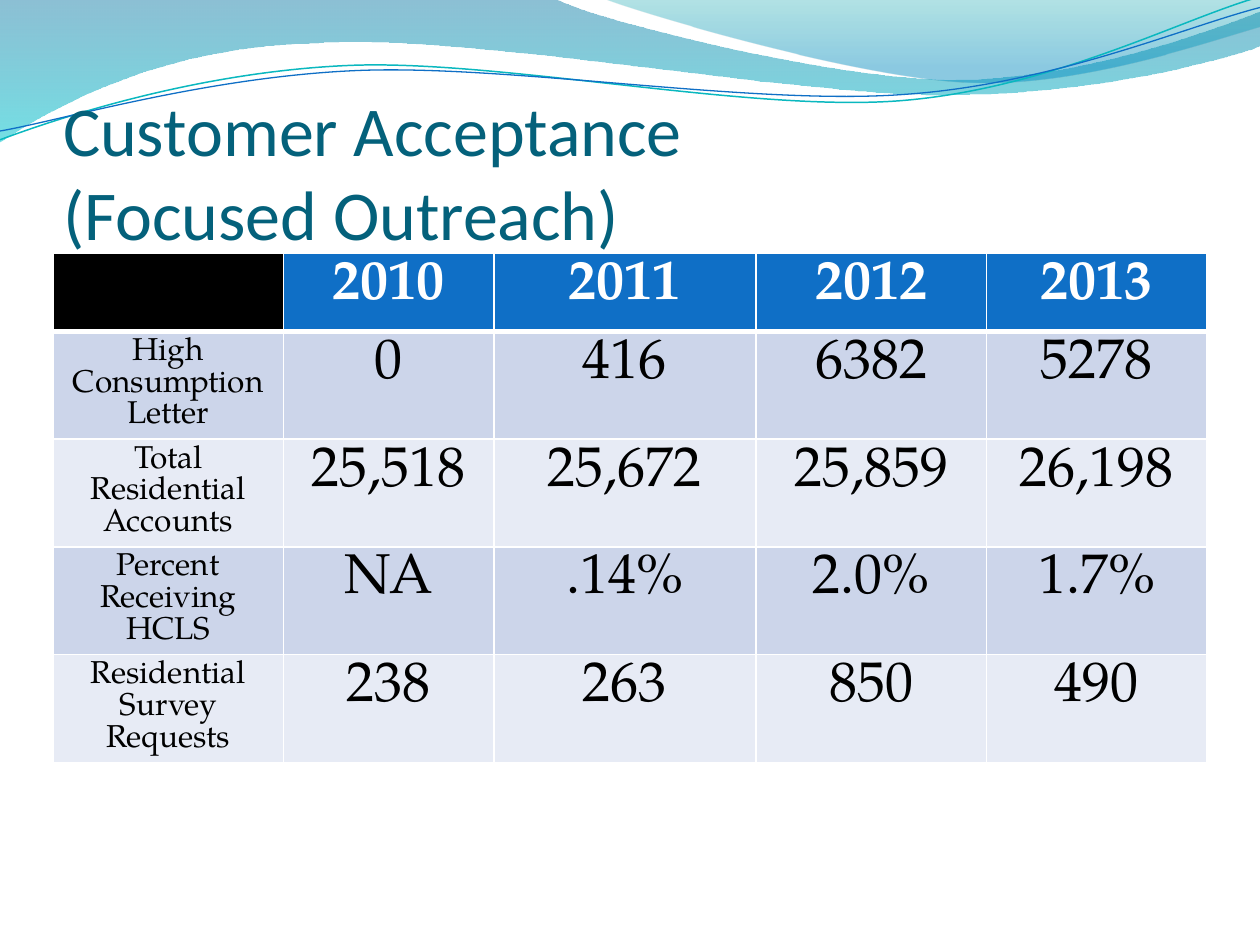
from math import cos, radians, sin

from lxml.etree import SubElement
from pptx import Presentation
from pptx.dml.color import RGBColor
from pptx.enum.text import MSO_ANCHOR, PP_ALIGN
from pptx.oxml.ns import qn
from pptx.util import Inches, Pt

TABLE_FONT = "TeX Gyre Pagella"
COLUMN_WIDTHS = [1.83, 1.67, 2.08, 1.83, 1.75]
ROW_HEIGHT = 0.62
ROWS = [
    ["", "2010", "2011", "2012", "2013"],
    ["High Consumption Letter", "0", "416", "6382", "5278"],
    ["Total Residential\nAccounts", "25,518", "25,672", "25,859", "26,198"],
    ["Percent Receiving HCLS", "NA", ".14%", "2.0%", "1.7%"],
    ["Residential Survey Requests", "238", "263", "850", "490"],
]

UNITS = 1000  # path units to the inch
TILT = -2.7  # degrees by which the wave lines are turned

# Each path is a start point and steps: 2 numbers for a line, 6 for a Bézier curve.
WIDE_WAVE = [
    (0, 0), (4.4, -0.01),
    (4.76, 0.17, 6.64, 0.63, 7.58, 0.63), (8.53, 0.63, 9.58, 0.26, 10, 0.09),
    (10.01, 0.36),
    (9.83, 0.44, 8.7, 0.76, 7.46, 0.75), (6.22, 0.75, 3.82, 0.28, 2.57, 0.34),
    (1.29, 0.36, 0.46, 0.83, -0.01, 1.13),
]
RIGHT_WAVE = [
    (4.79, -0.01),
    (5.09, 0.11, 6.82, 0.62, 7.69, 0.65), (8.56, 0.69, 9.61, 0.32, 10, 0.21),
    (10, 0),
]
TEAL_LINE = [
    (0, 1.11),
    (0.48, 0.93, 1.58, 0.57, 2.77, 0.52), (3.95, 0.47, 5.93, 0.89, 7.13, 0.8),
    (8.33, 0.71, 9.38, 0.15, 9.98, -0.02),
]
BLUE_LINE = [
    (0, 1.04),
    (0.47, 0.96, 1.64, 0.61, 2.83, 0.56), (4.03, 0.51, 5.97, 0.84, 7.17, 0.75),
    (8.36, 0.67, 9.41, 0.21, 10, 0.06),
]


def color(hex_string):
    return RGBColor.from_string(hex_string)


def pairs(numbers):
    return list(zip(numbers[::2], numbers[1::2]))


def turn(path, degrees, center):
    """Turn every point of a path clockwise about the center."""
    cosine, sine = cos(radians(degrees)), sin(radians(degrees))
    turned = []
    for segment in path:
        numbers = []
        for x, y in pairs(segment):
            dx, dy = x - center[0], y - center[1]
            numbers += [center[0] + dx * cosine - dy * sine,
                        center[1] + dx * sine + dy * cosine]
        turned.append(tuple(numbers))
    return turned


def add_path(slide, path, close):
    """Add a freeform through the path's end points, then bend its curved steps."""
    path = [[round(number * UNITS) for number in segment] for segment in path]
    anchors = [segment[-2:] for segment in path]
    left, top = (min(values) for values in zip(*anchors))
    builder = slide.shapes.build_freeform(*anchors[0], scale=Inches(1) / UNITS)
    builder.add_line_segments(anchors[1:], close=close)
    shape = builder.convert_to_shape()
    shape.shadow.inherit = False
    lines = list(shape._element.iter(qn("a:lnTo")))
    for line, segment in zip(lines, path[1:]):
        if len(segment) == 6:
            curve = SubElement(line.getparent(), qn("a:cubicBezTo"))
            for x, y in pairs(segment):
                SubElement(curve, qn("a:pt"), x=str(x - left), y=str(y - top))
            line.getparent().replace(line, curve)
    return shape


def add_wave(slide, path, stops):
    """Add a closed wave; each stop is a position, a colour and an opacity percent."""
    shape = add_path(slide, path, close=True)
    shape.line.fill.background()
    shape.fill.gradient()
    shape.fill.gradient_angle = 270
    for stop, (position, hex_string, _) in zip(shape.fill.gradient_stops, stops):
        stop.position = position
        stop.color.rgb = color(hex_string)
    elements = shape._element.spPr.iter(qn("a:srgbClr"))
    for element, (_, _, opacity) in zip(elements, stops):
        SubElement(element, qn("a:alpha")).set("val", str(opacity * 1000))


def add_wave_line(slide, path, center, hex_string, width):
    shape = add_path(slide, turn(path, -TILT, center), close=False)
    shape.rotation = TILT
    shape.fill.background()
    shape.line.color.rgb = color(hex_string)
    shape.line.width = Pt(width)


def format_title(slide):
    title = slide.shapes.title
    title.left, title.top, title.width, title.height = map(Inches, (0.5, 0.77, 9, 1.25))
    frame = title.text_frame
    frame.text = "Customer Acceptance \v(Focused Outreach)"
    frame.vertical_anchor = MSO_ANCHOR.BOTTOM
    frame.margin_left = frame.margin_right = frame.margin_bottom = 0
    paragraph = frame.paragraphs[0]
    paragraph.alignment = PP_ALIGN.LEFT
    for run in paragraph.runs:
        run.font.name = "Calibri"
        run.font.size = Pt(40)
        run.font.color.rgb = color("04617B")


def set_borders(cell, bottom_width):
    properties = cell._tc.get_or_add_tcPr()
    sides = [("a:lnL", 1), ("a:lnR", 1), ("a:lnT", 1), ("a:lnB", bottom_width)]
    for index, (tag, width) in enumerate(sides):
        line = SubElement(properties, qn(tag), w=str(Pt(width)))
        fill = SubElement(line, qn("a:solidFill"))
        SubElement(fill, qn("a:srgbClr"), val="FFFFFF")
        properties.insert(index, line)


def format_cell(cell, text, size, text_color, fill_color, bold):
    cell.text_frame.text = text
    cell.fill.solid()
    cell.fill.fore_color.rgb = color(fill_color)
    for paragraph in cell.text_frame.paragraphs:
        paragraph.alignment = PP_ALIGN.CENTER
        for run in paragraph.runs:
            run.font.name = TABLE_FONT
            run.font.size = Pt(size)
            run.font.bold = bold
            run.font.color.rgb = color(text_color)


def add_outreach_table(slide):
    frame = slide.shapes.add_table(
        len(ROWS), len(COLUMN_WIDTHS), Inches(0.42), Inches(2.01),
        Inches(sum(COLUMN_WIDTHS)), Inches(ROW_HEIGHT * len(ROWS)))
    table = frame.table
    for column, width in zip(table.columns, COLUMN_WIDTHS):
        column.width = Inches(width)
    for row_index, values in enumerate(ROWS):
        header = row_index == 0
        for column_index, text in enumerate(values):
            label = column_index == 0
            if header:
                fill_color = "000000" if label else "0F6FC6"
            else:
                fill_color = "CCD5EA" if row_index % 2 else "E7EBF5"
            cell = table.cell(row_index, column_index)
            format_cell(cell, text, 18 if label else 32,
                        "FFFFFF" if header else "000000", fill_color, header)
            set_borders(cell, 3 if header else 1)
    frame.height = Inches(4.63)


def main():
    presentation = Presentation()
    presentation.slide_width, presentation.slide_height = Inches(10), Inches(7.5)
    slide = presentation.slides.add_slide(presentation.slide_layouts[5])
    add_wave(slide, WIDE_WAVE, [(0, "0074A1", 45), (1, "00C6CF", 55)])
    add_wave(slide, RIGHT_WAVE, [(0, "00A1A9", 30), (0.8, "008BBF", 45)])
    add_wave_line(slide, TEAL_LINE, (4.99, 0.57), "0AB8BF", 0.85)
    add_wave_line(slide, BLUE_LINE, (5, 0.59), "0F6FC6", 0.75)
    format_title(slide)
    # The waves lie behind the title.
    slide.shapes._spTree.append(slide.shapes.title._element)
    add_outreach_table(slide)
    presentation.save("out.pptx")


if __name__ == "__main__":
    main()
